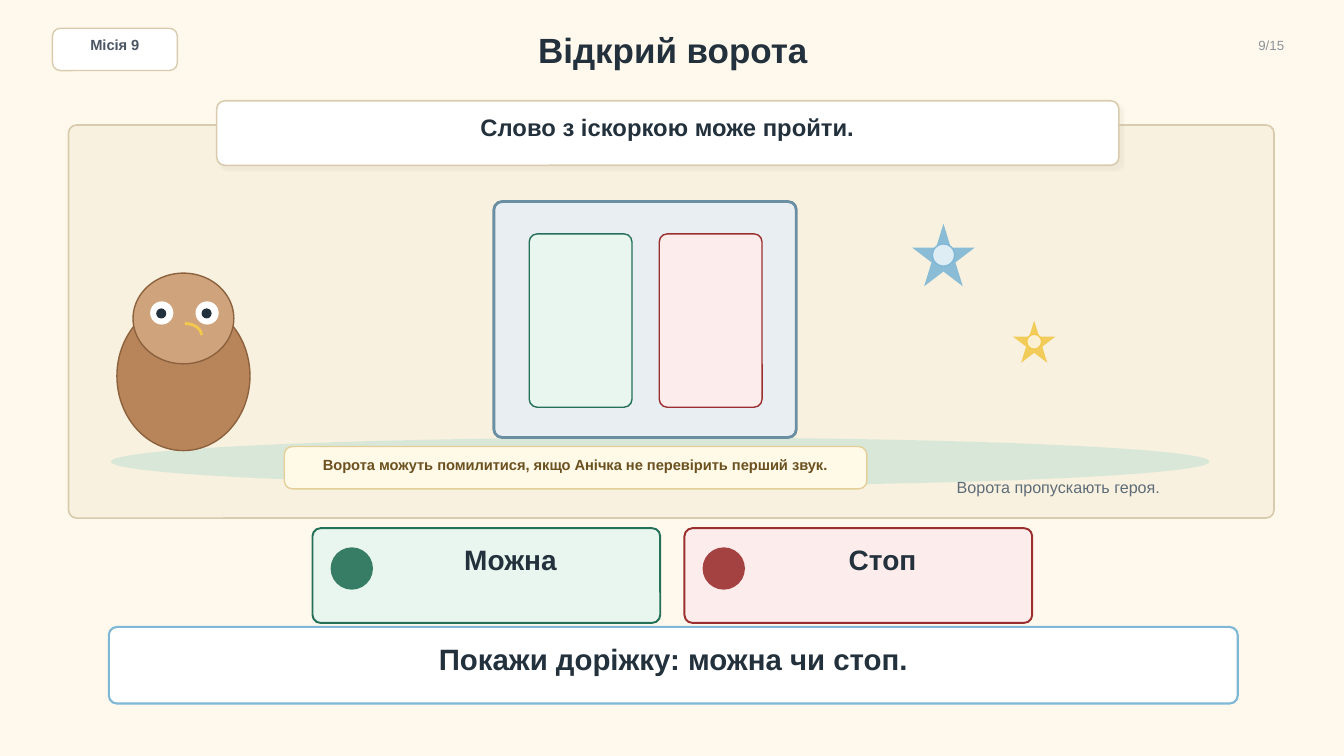
from lxml import etree
from pptx import Presentation
from pptx import util as u
from pptx.dml import color
from pptx.enum import shapes, text
from pptx.oxml import ns

Pt = u.Pt
RGB = color.RGBColor
KIND = shapes.MSO_SHAPE
ALIGN = text.PP_ALIGN

CREAM = RGB(0xFF, 0xF9, 0xED)
WHITE = RGB(0xFF, 0xFF, 0xFF)
INK = RGB(0x23, 0x31, 0x3D)
SLATE = RGB(0x4B, 0x55, 0x63)
GREY = RGB(0x8A, 0x92, 0x9A)
STEEL = RGB(0x5E, 0x6C, 0x78)
TAN = RGB(0xD9, 0xCB, 0xAE)
SAND = RGB(0xF8, 0xF1, 0xDF)
GRASS = RGB(0xD7, 0xE7, 0xD8)
BROWN = RGB(0xB8, 0x84, 0x5A)
BARK = RGB(0x8C, 0x62, 0x3E)
FAWN = RGB(0xCF, 0xA4, 0x7C)
GOLD = RGB(0xF2, 0xC9, 0x4C)
SKY = RGB(0x7F, 0xB7, 0xD6)
MIST = RGB(0xE8, 0xEE, 0xF1)
BLUE = RGB(0x6A, 0x8F, 0xA3)
MINT = RGB(0xE9, 0xF6, 0xF0)
GREEN = RGB(0x24, 0x70, 0x58)
PINK = RGB(0xFD, 0xEC, 0xEC)
RED = RGB(0x9B, 0x2F, 0x2F)
PALE = RGB(0xFF, 0xF9, 0xE8)
WHEAT = RGB(0xE4, 0xCF, 0x98)
UMBER = RGB(0x6B, 0x51, 0x20)

ROUND = 5.76

deck = Presentation()
deck.slide_width, deck.slide_height = Pt(960), Pt(540)
slide = deck.slides.add_slide(deck.slide_layouts[5])
slide.background.fill.solid()
slide.background.fill.fore_color.rgb = CREAM


def draw(kind, x, y, w, h, fill=None, edge=None, wide=1, alpha=100):
    item = slide.shapes.add_shape(kind, Pt(x), Pt(y), Pt(w), Pt(h))
    item.shadow.inherit = False
    if kind == KIND.ROUNDED_RECTANGLE:
        item.adjustments[0] = ROUND / min(w, h)
    if fill is None:
        item.fill.background()
    else:
        item.fill.solid()
        item.fill.fore_color.rgb = fill
    if alpha < 100:
        tint = item._element.spPr.find(ns.qn("a:solidFill"))[0]
        etree.SubElement(tint, ns.qn("a:alpha"), val=str(alpha * 1000))
    if edge is None:
        item.line.fill.background()
    else:
        item.line.color.rgb = edge
        item.line.width = Pt(wide)
    return item


def write(words, x, y, w, h, size=10.5, ink=INK, bold=True, align=ALIGN.CENTER, box=None):
    if box is None:
        box = slide.shapes.add_textbox(Pt(x), Pt(y), Pt(w), Pt(h))
    box.left, box.top, box.width, box.height = Pt(x), Pt(y), Pt(w), Pt(h)
    frame = box.text_frame
    frame.word_wrap = True
    frame.auto_size = text.MSO_AUTO_SIZE.NONE
    frame.vertical_anchor = text.MSO_ANCHOR.MIDDLE
    frame.margin_left = frame.margin_right = frame.margin_top = frame.margin_bottom = 0
    frame.text = words
    line = frame.paragraphs[0]
    line.alignment = align
    line.font.name = "Arial"
    line.font.size = Pt(size)
    line.font.bold = bold
    line.font.color.rgb = ink


CARD, OVAL, STAR = KIND.ROUNDED_RECTANGLE, KIND.OVAL, KIND.STAR_5_POINT

draw(CARD, 37.44, 20.16, 89.28, 30.24, WHITE, TAN)
write("Місія 9", 44.64, 26.64, 74.88, 10.8, ink=SLATE)
write("Відкрий ворота", 144, 18, 673.2, 34.56, size=25, box=slide.shapes.title)
write("9/15", 865.44, 26.64, 51.84, 11.52, size=9.5, ink=GREY, bold=False, align=ALIGN.RIGHT)

draw(CARD, 48.96, 89.28, 861.12, 280.8, SAND, TAN, 1.2)
draw(OVAL, 79.2, 312.48, 784.8, 34.56, GRASS, alpha=92)

draw(OVAL, 83.52, 215.28, 95.04, 106.56, BROWN, BARK)
draw(OVAL, 95.04, 195.12, 72, 64.8, FAWN, BARK)
for x in (107.28, 139.68):
    draw(OVAL, x, 215.28, 16.56, 16.56, WHITE)
    draw(OVAL, x + 4.32, 220.32, 7.2, 7.2, INK)
draw(KIND.ARC, 120.24, 231.12, 23.76, 16.56, edge=GOLD, wide=2)

draw(CARD, 352.8, 144, 216, 168.48, MIST, BLUE, 2)
for x, fill, edge in ((378, MINT, GREEN), (470.88, PINK, RED)):
    draw(CARD, x, 167.04, 73.44, 123.84, fill, edge)

for x, y, size, core, hue in ((651.6, 159.84, 44.64, 15.84, SKY), (723.6, 228.96, 30.24, 10.8, GOLD)):
    gap = (size - core) / 2
    draw(STAR, x, y, size, size, hue, alpha=90)
    draw(OVAL, x + gap, y + gap, core, core, WHITE, hue, alpha=72)

sign = draw(CARD, 154.8, 72, 644.4, 46.08, WHITE, TAN, 1.1)
glow = sign._element.spPr.find(ns.qn("a:effectLst"))
cast = etree.SubElement(glow, ns.qn("a:outerShdw"), blurRad=str(Pt(1)), dist=str(Pt(4)),
                        dir="2700000", algn="tl", rotWithShape="0")
tint = etree.SubElement(cast, ns.qn("a:srgbClr"), val="C8C1B0")
etree.SubElement(tint, ns.qn("a:alpha"), val="16000")
write("Слово з іскоркою може пройти.", 171.36, 81.36, 610.56, 18.72, size=17)

draw(CARD, 203.04, 318.96, 416.16, 30.24, PALE, WHEAT)
write("Ворота можуть помилитися, якщо Анічка не перевірить перший звук.",
      214.56, 325.44, 393.12, 12.96, ink=UMBER)

draw(CARD, 77.76, 447.84, 806.4, 54.72, WHITE, SKY, 1.5)
write("Покажи доріжку: можна чи стоп.", 96.48, 460.08, 768.96, 20.16, size=21)

for x, words, fill, edge in ((223.2, "Можна", MINT, GREEN), (488.88, "Стоп", PINK, RED)):
    draw(CARD, x, 377.28, 248.4, 67.68, fill, edge, 1.4)
    draw(OVAL, x + 12.96, 390.96, 30.24, 30.24, edge, alpha=90)
    write(words, x + 47.52, 387.36, 187.92, 24.48, size=20)

write("Ворота пропускають героя.", 648, 339.84, 216, 15.84, size=11.5, ink=STEEL, bold=False)

deck.save("out.pptx")
